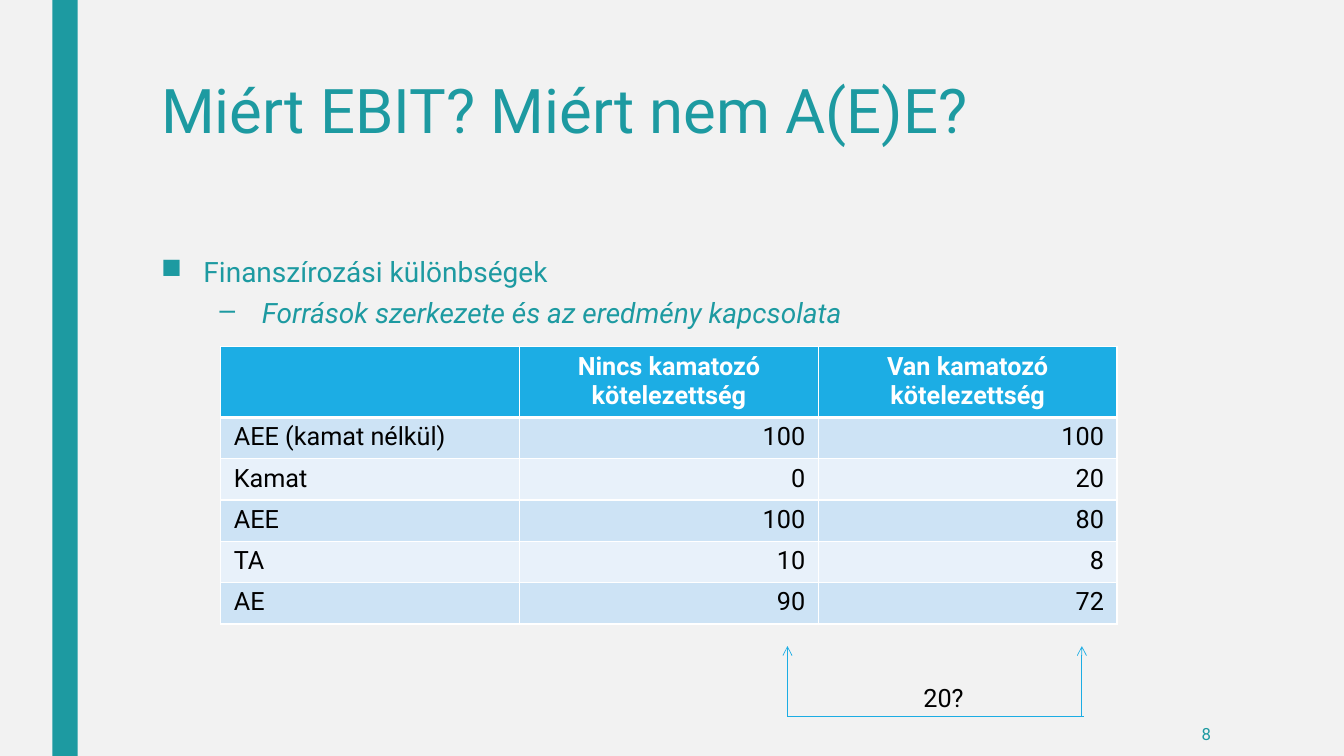
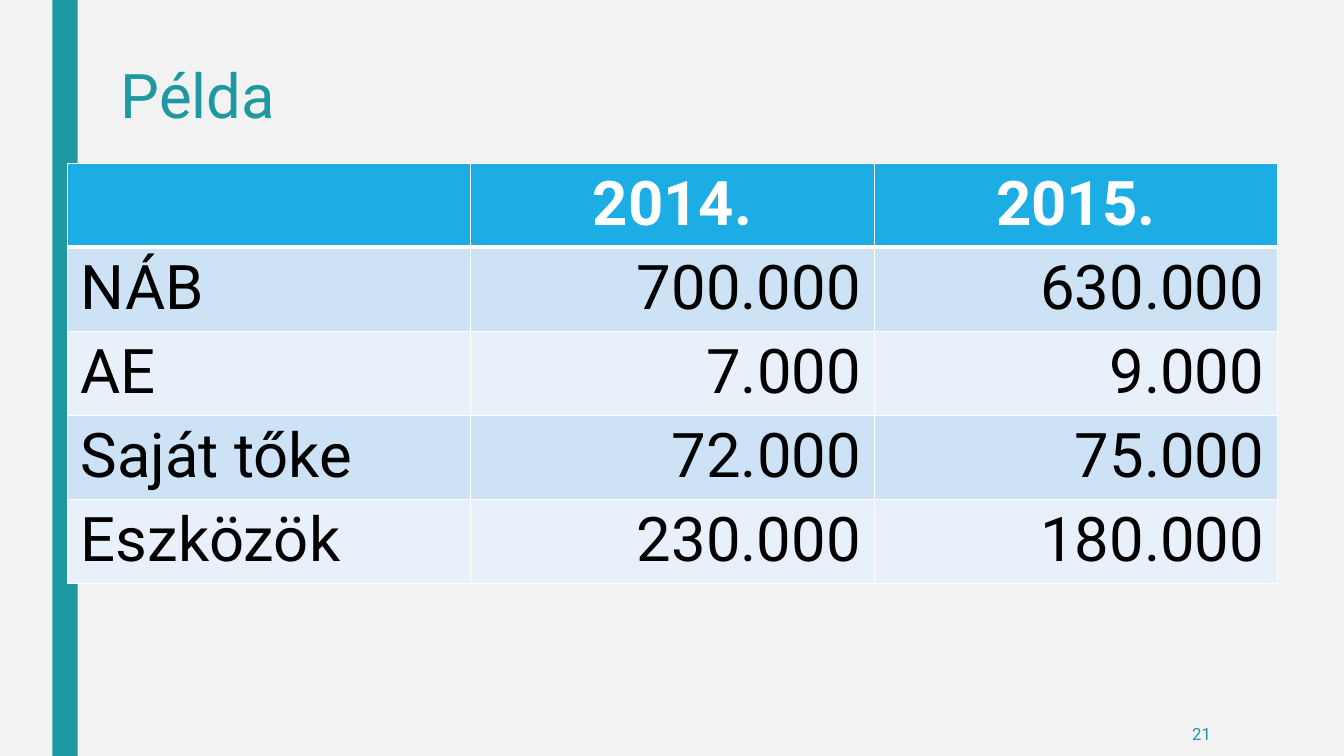
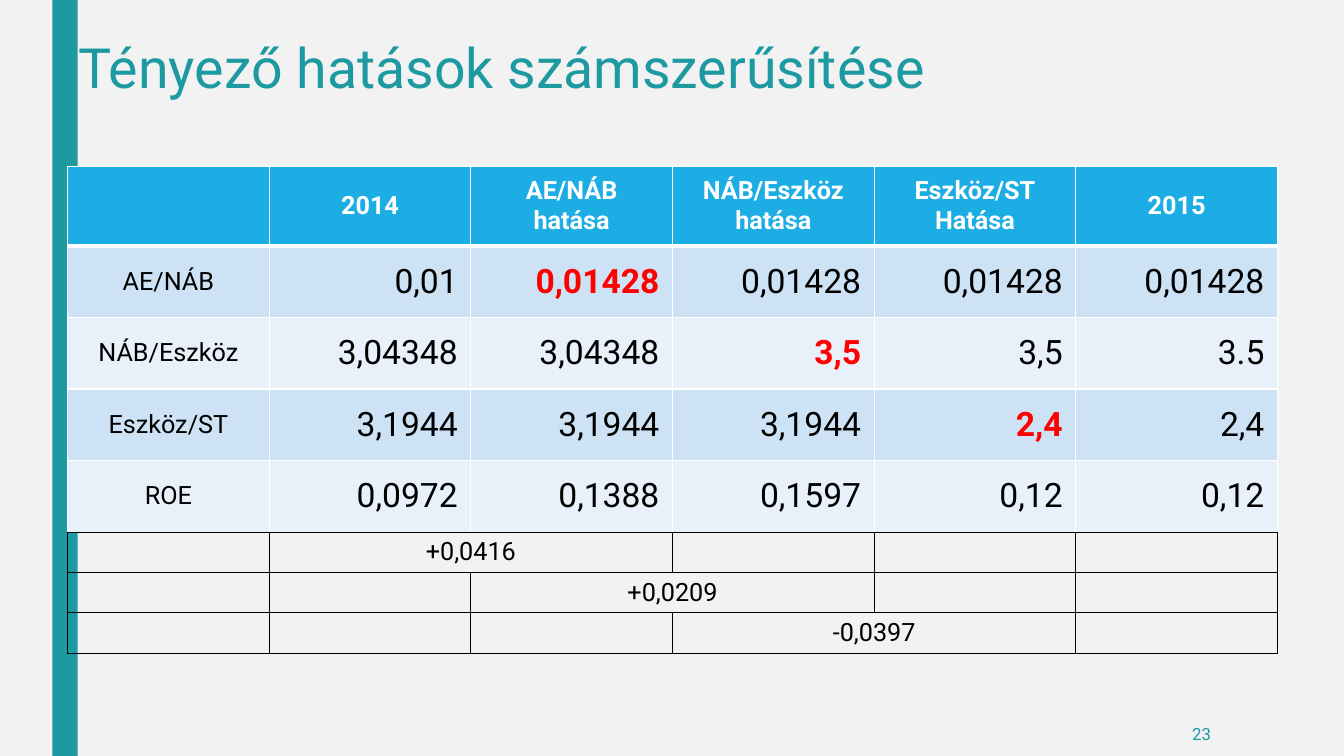
from dataclasses import dataclass

from lxml import etree
from pptx import Presentation
from pptx.dml.color import RGBColor
from pptx.enum.shapes import MSO_CONNECTOR, MSO_SHAPE
from pptx.enum.text import MSO_ANCHOR, PP_ALIGN
from pptx.oxml.ns import qn
from pptx.util import Inches, Pt

LEFT, CENTER, RIGHT = PP_ALIGN.LEFT, PP_ALIGN.CENTER, PP_ALIGN.RIGHT
TOP, MIDDLE = MSO_ANCHOR.TOP, MSO_ANCHOR.MIDDLE
STRAIGHT, RECTANGLE = MSO_CONNECTOR.STRAIGHT, MSO_SHAPE.RECTANGLE


@dataclass(frozen=True)
class Theme:
    font: str = "Roboto"
    background: str = "F2F2F2"
    teal: str = "1D9AA1"
    header: str = "1CADE4"
    bands: tuple = ("CDE3F5", "E8F1FA")
    white: str = "FFFFFF"
    black: str = "000000"
    red: str = "FF0000"
    title_size: float = 44
    body_size: float = 20
    text_size: float = 18
    value_size: float = 24
    number_size: float = 12


THEME = Theme()
WIDTH, HEIGHT = 13.33, 7.5
BAR = (0.52, 0, 0.25, HEIGHT)
NUMBER_BOX = (10.36, 7.06, 1.75, 0.44)

BULLETS = [
    {"text": "Finanszírozási különbségek", "sign": "■", "margin": 0.42, "before": 10, "italic": False},
    {"text": "Források szerkezete és az eredmény kapcsolata", "sign": "–", "margin": 1, "before": 5, "italic": True},
]
BULLET_HANG = 0.42

SLIDES = [
    {
        "title": "Miért EBIT? Miért nem A(E)E?",
        "title_box": (1.5, 0.75, 10.5, 1.62),
        "number": "8",
        "bullets": BULLETS,
        "comparison": "20?",
        "table": {
            "box": (2.19, 3.44, 8.89),
            "heights": [0.68] + [0.41] * 5,
            "rows": [
                ("", "Nincs kamatozó kötelezettség", "Van kamatozó kötelezettség"),
                ("AEE (kamat nélkül)", "100", "100"),
                ("Kamat", "0", "20"),
                ("AEE", "100", "80"),
                ("TA", "10", "8"),
                ("AE", "90", "72"),
            ],
        },
    },
    {
        "title": "Példa",
        "title_box": (1.1, 0.6, 11.56, 0.94),
        "number": "21",
        "table": {
            "box": (0.67, 1.62, 12),
            "heights": [0.82] * 5,
            "label_size": THEME.title_size,
            "value_size": THEME.title_size,
            "rows": [
                ("", "2014.", "2015."),
                ("NÁB", "700.000", "630.000"),
                ("AE", "7.000", "9.000"),
                ("Saját tőke", "72.000", "75.000"),
                ("Eszközök", "230.000", "180.000"),
            ],
        },
    },
    {
        "title": "Tényező hatások számszerűsítése",
        "title_box": (0.68, 0.36, 12, 1.25),
        "title_size": 39.6,
        "number": "23",
        "table": {
            "box": (0.67, 1.65, 12),
            "heights": [0.79] + [0.71] * 4 + [0.4] * 3,
            "value_size": THEME.value_size,
            "label_align": CENTER,
            "anchor": MIDDLE,
            "highlights": {(1, 2), (2, 3), (3, 4)},
            "rows": [
                ("", "2014", "AE/NÁB\nhatása", "NÁB/Eszköz\nhatása", "Eszköz/ST\nHatása", "2015"),
                ("AE/NÁB", "0,01", "0,01428", "0,01428", "0,01428", "0,01428"),
                ("NÁB/Eszköz", "3,04348", "3,04348", "3,5", "3,5", "3.5"),
                ("Eszköz/ST", "3,1944", "3,1944", "3,1944", "2,4", "2,4"),
                ("ROE", "0,0972", "0,1388", "0,1597", "0,12", "0,12"),
            ],
            "changes": ["+0,0416", "+0,0209", "-0,0397"],
        },
    },
]


def color(value):
    return RGBColor.from_string(value)


def inches(values):
    return [Inches(value) for value in values]


def style(paragraph, size, ink, align=LEFT, bold=False, italic=False):
    paragraph.alignment = align
    for run in paragraph.runs:
        font = run.font
        font.name, font.size, font.bold, font.italic = THEME.font, Pt(size), bold, italic
        font.color.rgb = color(ink)


def add_text(slide, box, text, size, ink, align=LEFT, anchor=TOP, wrap=True):
    frame = slide.shapes.add_textbox(*inches(box)).text_frame
    frame.word_wrap = wrap
    frame.vertical_anchor = anchor
    frame.text = text
    for paragraph in frame.paragraphs:
        style(paragraph, size, ink, align)
    return frame


def add_frame(slide, content):
    bar = slide.shapes.add_shape(RECTANGLE, *inches(BAR))
    bar.shadow.inherit = False
    bar.fill.solid()
    bar.fill.fore_color.rgb = color(THEME.teal)
    bar.line.fill.background()
    title = add_text(slide, content["title_box"], content["title"],
                     content.get("title_size", THEME.title_size), THEME.teal)
    title.paragraphs[0].line_spacing = 0.89
    add_text(slide, NUMBER_BOX, content["number"], THEME.number_size, THEME.teal, RIGHT, MIDDLE)


def add_bullets(slide, bullets):
    text = "\n".join(bullet["text"] for bullet in bullets)
    frame = add_text(slide, (1.5, 2.5, 10.5, 3.92), text, THEME.body_size, THEME.teal)
    for paragraph, bullet in zip(frame.paragraphs, bullets):
        style(paragraph, THEME.body_size, THEME.teal, italic=bullet["italic"])
        paragraph.line_spacing = 0.94
        paragraph.space_before, paragraph.space_after = Pt(bullet["before"]), Pt(2)
        properties = paragraph._p.get_or_add_pPr()
        properties.set("marL", str(Inches(bullet["margin"])))
        properties.set("indent", str(-Inches(BULLET_HANG)))
        etree.SubElement(properties, qn("a:buChar")).set("char", bullet["sign"])


def set_borders(cell, ink, **special):
    properties = cell._tc.get_or_add_tcPr()
    for side in "LRTB":
        side_ink, width = special.get(side, (ink, 1))
        line = etree.SubElement(properties, qn("a:ln" + side), w=str(Pt(width)))
        fill = etree.SubElement(line, qn("a:solidFill"))
        etree.SubElement(fill, qn("a:srgbClr"), val=side_ink)


def fill_cell(cell, text, fill, size, ink, align, anchor, bold=False):
    if fill:
        cell.fill.solid()
        cell.fill.fore_color.rgb = color(fill)
    else:
        cell.fill.background()
    cell.margin_left = cell.margin_right = Inches(0.13)
    cell.margin_top = cell.margin_bottom = Inches(0.05)
    cell.vertical_anchor = anchor
    cell.text_frame.text = text
    for paragraph in cell.text_frame.paragraphs:
        style(paragraph, size, ink, align, bold)


def add_table(slide, content):
    rows, heights = content["rows"], content["heights"]
    changes = content.get("changes", [])
    highlights = content.get("highlights", set())
    label_size = content.get("label_size", THEME.text_size)
    value_size = content.get("value_size", THEME.text_size)
    label_align = content.get("label_align", LEFT)
    anchor = content.get("anchor", TOP)
    column_count = len(rows[0])
    box = inches((*content["box"], sum(heights)))
    table = slide.shapes.add_table(len(heights), column_count, *box).table
    table.first_row = table.horz_banding = False
    for row, height in zip(table.rows, heights):
        row.height = Inches(height)

    for r, values in enumerate(rows):
        for c, text in enumerate(values):
            cell = table.cell(r, c)
            special = {}
            if r == 0:
                special["B"] = (THEME.white, 3)
            elif r == 1:
                special["T"] = (THEME.white, 3)
            if changes and r == len(rows) - 1:
                special["B"] = (THEME.black, 1)
            set_borders(cell, THEME.white, **special)
            if r == 0:
                fill_cell(cell, text, THEME.header, label_size, THEME.white, CENTER, anchor, True)
                continue
            marked = (r, c) in highlights
            size, align = (value_size, RIGHT) if c else (label_size, label_align)
            fill_cell(cell, text, THEME.bands[(r - 1) % 2], size,
                      THEME.red if marked else THEME.black, align, anchor, marked)

    for step, change in enumerate(changes, 1):
        r = len(rows) + step - 1
        for c in range(column_count):
            cell = table.cell(r, c)
            set_borders(cell, THEME.black)
            fill_cell(cell, change if c == step else "", None, label_size, THEME.black, CENTER, anchor)
        table.cell(r, step).merge(table.cell(r, step + 1))


def add_line(slide, start, end, arrow=False):
    connector = slide.shapes.add_connector(STRAIGHT, *inches((*start, *end)))
    connector.line.color.rgb = color(THEME.header)
    connector.line.width = Pt(0.5)
    if arrow:
        etree.SubElement(connector.line._get_or_add_ln(), qn("a:tailEnd"), type="arrow")
    etree.SubElement(connector._element.spPr, qn("a:effectLst"))


def add_comparison(slide, text):
    left, right, top, bottom = 7.81, 10.73, 6.41, 7.11
    for x in (right, left):
        add_line(slide, (x, bottom), (x, top), True)
    add_line(slide, (left, bottom), (right + 0.02, bottom))
    add_text(slide, (9.06, 6.72, 0.62, 0.4), text, THEME.text_size, THEME.black, wrap=False)


def main():
    presentation = Presentation()
    presentation.slide_width, presentation.slide_height = inches((WIDTH, HEIGHT))
    background = presentation.slide_master.background.fill
    background.solid()
    background.fore_color.rgb = color(THEME.background)
    for content in SLIDES:
        slide = presentation.slides.add_slide(presentation.slide_layouts[6])
        add_frame(slide, content)
        if "bullets" in content:
            add_bullets(slide, content["bullets"])
        add_table(slide, content["table"])
        if "comparison" in content:
            add_comparison(slide, content["comparison"])
    presentation.save("out.pptx")


if __name__ == "__main__":
    main()
